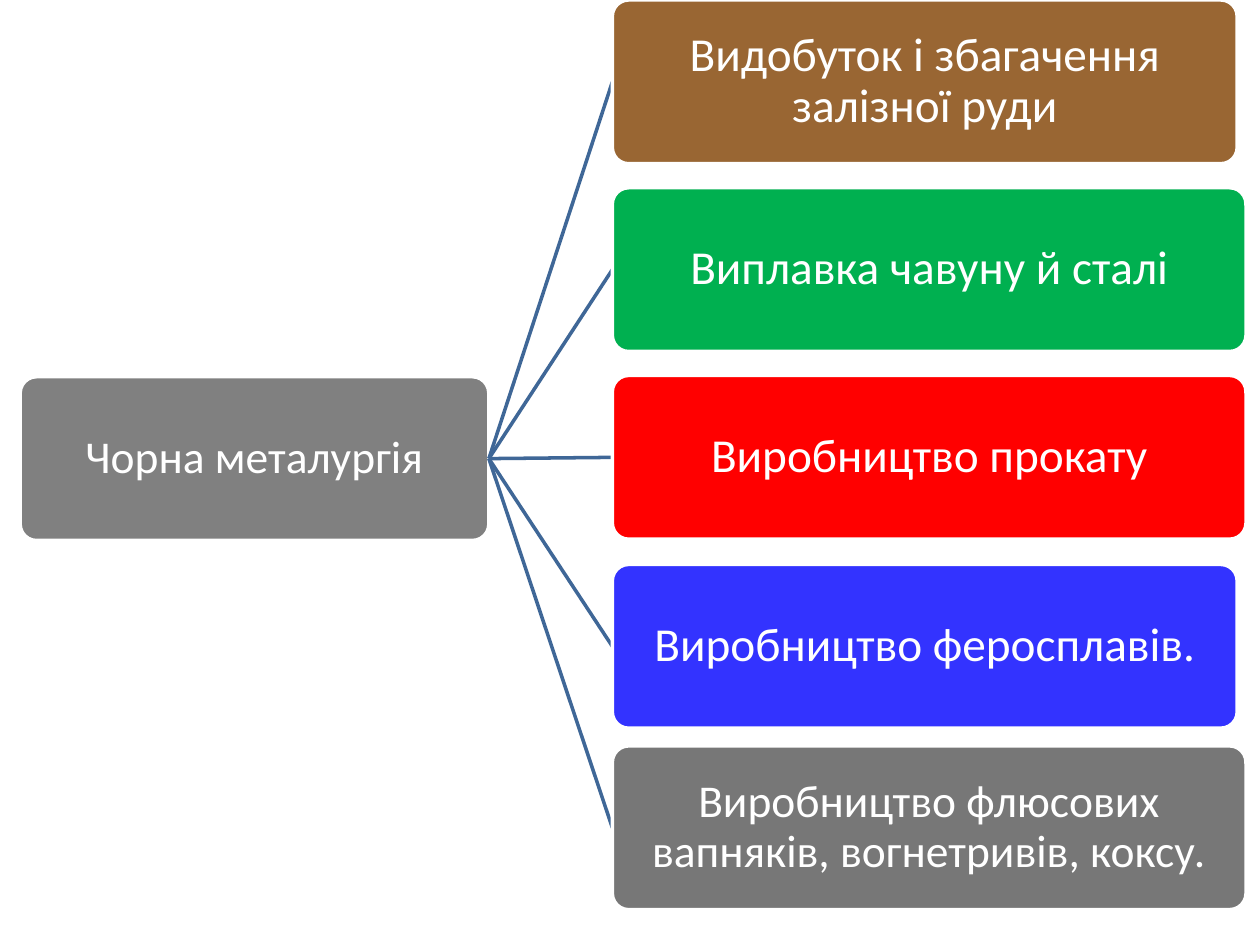
"""Builds a slide with the branches of ferrous metallurgy as a tree."""
from lxml.etree import SubElement
from pptx import Presentation
from pptx.dml.color import RGBColor
from pptx.enum.shapes import MSO_CONNECTOR, MSO_SHAPE
from pptx.enum.text import MSO_ANCHOR, PP_ALIGN
from pptx.oxml.ns import qn
from pptx.util import Inches, Pt

COLORS = {
    "white": "FFFFFF", "link": "3F6797", "root": "808080", "ore": "996633",
    "steel": "00B050", "rolling": "FF0000", "alloys": "3333FF", "flux": "777777",
}
BOX_HEIGHT = 1.3
BRANCH_LEFT = 4.86
BRANCHES = [
    ("Видобуток і збагачення залізної руди", "ore", 0, 4.96, 27),
    ("Виплавка чавуну й сталі", "steel", 1.49, 5.03, 27),
    ("Виробництво прокату", "rolling", 2.98, 5.03, 27),
    ("Виробництво феросплавів.", "alloys", 4.48, 4.96, 27),
    ("Виробництво флюсових вапняків, вогнетривів, коксу.", "flux", 5.92, 5.03, 26),
]


class TreeSlide:
    """Holds the style of the tree and the slide it is drawn on."""

    font = "Calibri"
    line_width = Pt(2)
    inset = Inches(0.02)

    def __init__(self, slide):
        self.slide = slide

    def color(self, name):
        return RGBColor.from_string(COLORS[name])

    def box(self, text, fill, left, top, width, size):
        box = self.slide.shapes.add_shape(
            MSO_SHAPE.ROUNDED_RECTANGLE,
            Inches(left), Inches(top), Inches(width), Inches(BOX_HEIGHT))
        box.adjustments[0] = 0.1
        box.shadow.inherit = False
        box.fill.solid()
        box.fill.fore_color.rgb = self.color(fill)
        box.line.color.rgb = self.color("white")
        box.line.width = self.line_width
        frame = box.text_frame
        frame.word_wrap = True
        frame.vertical_anchor = MSO_ANCHOR.MIDDLE
        frame.margin_left = frame.margin_right = self.inset
        frame.margin_top = frame.margin_bottom = self.inset
        paragraph = frame.paragraphs[0]
        paragraph.alignment = PP_ALIGN.CENTER
        paragraph.line_spacing = 0.9
        run = paragraph.add_run()
        run.text = text
        run.font.name = self.font
        run.font.size = Pt(size)
        run.font.color.rgb = self.color("white")
        return box

    def link_from(self, parent):
        link = self.slide.shapes.add_connector(MSO_CONNECTOR.STRAIGHT, 0, 0, 0, 0)
        link.line.color.rgb = self.color("link")
        link.line.width = self.line_width
        SubElement(link._element.spPr, qn("a:effectLst"))
        link.begin_connect(parent, 3)
        return link


def main():
    deck = Presentation()
    deck.slide_width, deck.slide_height = Inches(10), Inches(7.5)
    tree = TreeSlide(deck.slides.add_slide(deck.slide_layouts[6]))
    industry = tree.box("Чорна металургія", "root", 0.16, 2.99, 3.72, 26)
    for text, fill, top, width, size in BRANCHES:
        link = tree.link_from(industry)
        branch = tree.box(text, fill, BRANCH_LEFT, top, width, size)
        link.end_connect(branch, 1)
    deck.save("out.pptx")


if __name__ == "__main__":
    main()
